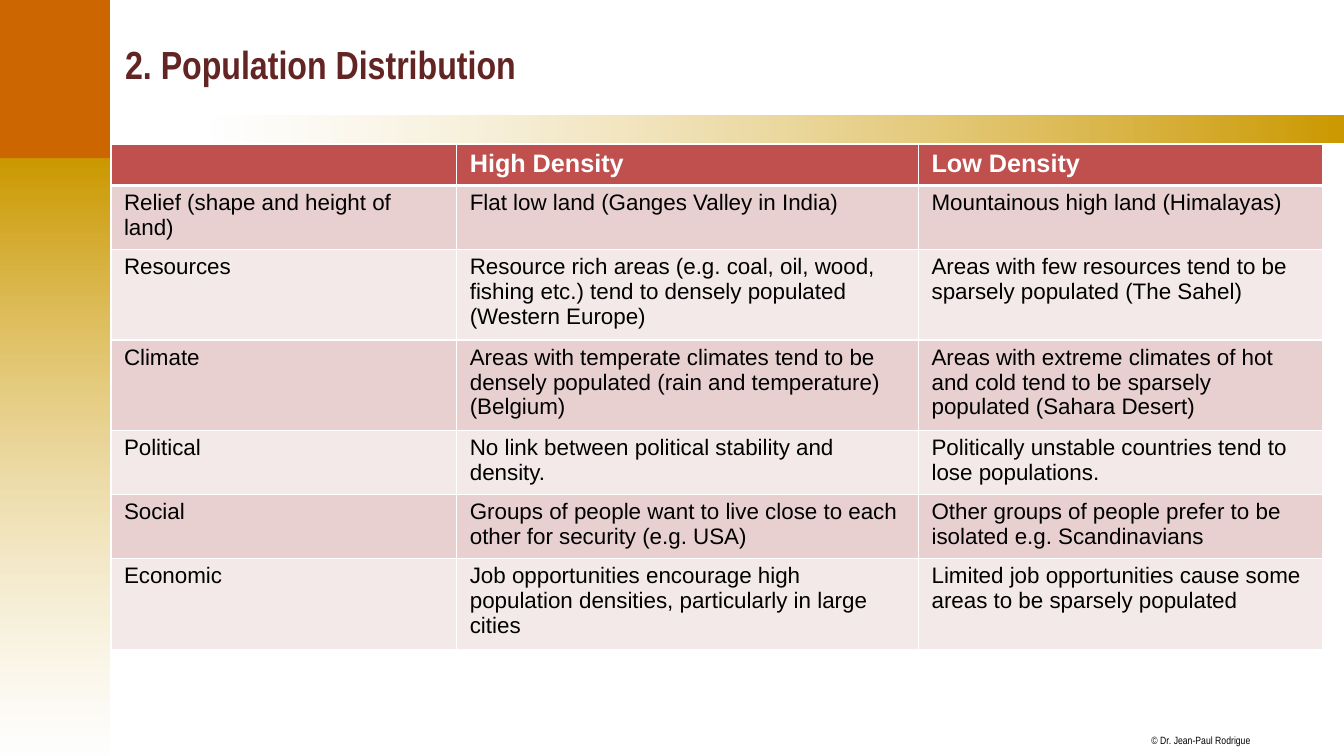
from lxml.etree import SubElement
from pptx import Presentation
from pptx.dml.color import RGBColor
from pptx.enum.shapes import MSO_SHAPE
from pptx.enum.text import MSO_ANCHOR, MSO_AUTO_SIZE, PP_ALIGN
from pptx.oxml import parse_xml
from pptx.oxml.ns import nsdecls, qn
from pptx.util import Inches, Pt

GOLD = RGBColor(0xCC, 0x99, 0x00)
ORANGE = RGBColor(0xCC, 0x66, 0x00)
MAROON = RGBColor(0x63, 0x25, 0x23)
RED = RGBColor(0xC0, 0x50, 0x4D)
ROSE = RGBColor(0xE8, 0xD0, 0xD0)
PALE_ROSE = RGBColor(0xF4, 0xE9, 0xE9)
WHITE = RGBColor(0xFF, 0xFF, 0xFF)
BLACK = RGBColor(0x00, 0x00, 0x00)

HEADER_FONT = {"name": "Arial", "size": Pt(18), "bold": True}
BODY_FONT = {"name": "Arial", "size": Pt(16), "bold": False}
TITLE_FONT = {"name": "Arial Narrow", "size": Pt(28), "bold": True}
CREDIT_FONT = {"name": "Arial Narrow", "size": Pt(7.5), "bold": False}


def write(frame, text, font_format, color):
    paragraph = frame.paragraphs[0]
    paragraph.text = text
    for key, value in font_format.items():
        setattr(paragraph.font, key, value)
    paragraph.font.color.rgb = color
    return paragraph


def add_band(left, top, width, height):
    band = slide.shapes.add_shape(
        MSO_SHAPE.RECTANGLE, Inches(left), Inches(top), Inches(width), Inches(height)
    )
    band.shadow.inherit = False
    band.line.fill.background()
    return band


prs = Presentation()
prs.slide_width, prs.slide_height = Inches(13.33), Inches(7.5)
slide = prs.slides.add_slide(prs.slide_layouts[5])

gradient_bands = [
    ((-0.02, 1.57, 1.11, 5.93), 270, (GOLD, WHITE), 1, 51000),
    ((2.09, 1.15, 11.25, 0.26), 0, (WHITE, GOLD), 0, 50000),
]
for box, angle, colors, faded_stop, alpha in gradient_bands:
    band = add_band(*box)
    band.fill.gradient()
    band.fill.gradient_angle = angle
    for stop, color in zip(band.fill.gradient_stops, colors):
        stop.color.rgb = color
    faded = list(band._element.spPr.iter(qn("a:srgbClr")))[faded_stop]
    SubElement(faded, qn("a:alpha")).set("val", str(alpha))

corner = add_band(-0.02, -0.01, 1.11, 1.58)
corner.fill.solid()
corner.fill.fore_color.rgb = ORANGE

credit = slide.shapes.add_textbox(Inches(11.42), Inches(7.28), Inches(0.99), Inches(0.13))
credit_format = {
    "margin_left": 0, "margin_top": 0, "margin_right": 0, "margin_bottom": 0,
    "word_wrap": False, "auto_size": MSO_AUTO_SIZE.SHAPE_TO_FIT_TEXT,
}
for key, value in credit_format.items():
    setattr(credit.text_frame, key, value)
write(credit.text_frame, "© Dr. Jean-Paul Rodrigue", CREDIT_FONT, BLACK)

title = slide.shapes.title
title.left, title.top = Inches(1.14), Inches(0.11)
title.width, title.height = Inches(11.97), Inches(1.04)
title.text_frame.vertical_anchor = MSO_ANCHOR.MIDDLE
heading = write(title.text_frame, "2. Population Distribution", TITLE_FONT, MAROON)
heading.alignment = PP_ALIGN.LEFT

factors = [
    ("", "High Density", "Low Density"),
    ("Relief (shape and height of land)",
     "Flat low land (Ganges Valley in India)",
     "Mountainous high land (Himalayas)"),
    ("Resources",
     "Resource rich areas (e.g. coal, oil, wood, fishing etc.) tend to densely populated (Western Europe)",
     "Areas with few resources tend to be sparsely populated (The Sahel)"),
    ("Climate",
     "Areas with temperate climates tend to be densely populated (rain and temperature) (Belgium)",
     "Areas with extreme climates of hot and cold tend to be sparsely populated (Sahara Desert)"),
    ("Political",
     "No link between political stability and density.",
     "Politically unstable countries tend to lose populations."),
    ("Social",
     "Groups of people want to live close to each other for security (e.g. USA)",
     "Other groups of people prefer to be isolated e.g. Scandinavians"),
    ("Economic",
     "Job opportunities encourage high population densities, particularly in large cities",
     "Limited job opportunities cause some areas to be sparsely populated"),
]
cell_margins = {
    "margin_left": Inches(0.13), "margin_right": Inches(0.13),
    "margin_top": Inches(0.05), "margin_bottom": Inches(0.05),
}
density = slide.shapes.add_table(
    len(factors), 3, Inches(1.1), Inches(1.43), Inches(12.02), Inches(0.41 * len(factors))
).table
for column, width in zip(density.columns, (3.43, 4.58, 4.01)):
    column.width = Inches(width)

for row, texts in enumerate(factors):
    header = row == 0
    fill = RED if header else (PALE_ROSE, ROSE)[row % 2]
    font_format = HEADER_FONT if header else BODY_FONT
    for col, text in enumerate(texts):
        cell = density.cell(row, col)
        for key, value in cell_margins.items():
            setattr(cell, key, value)
        cell.fill.solid()
        cell.fill.fore_color.rgb = fill
        write(cell.text_frame, text, font_format, WHITE if header else BLACK)
        edges = {"L": 1, "R": 1, "T": 3 if row == 1 else 1, "B": 3 if header else 1}
        for position, (side, points) in enumerate(edges.items()):
            edge = parse_xml(
                f'<a:ln{side} {nsdecls("a")} w="{Pt(points)}"><a:solidFill>'
                f'<a:srgbClr val="{WHITE}"/></a:solidFill></a:ln{side}>'
            )
            cell._tc.get_or_add_tcPr().insert(position, edge)

prs.save("out.pptx")
